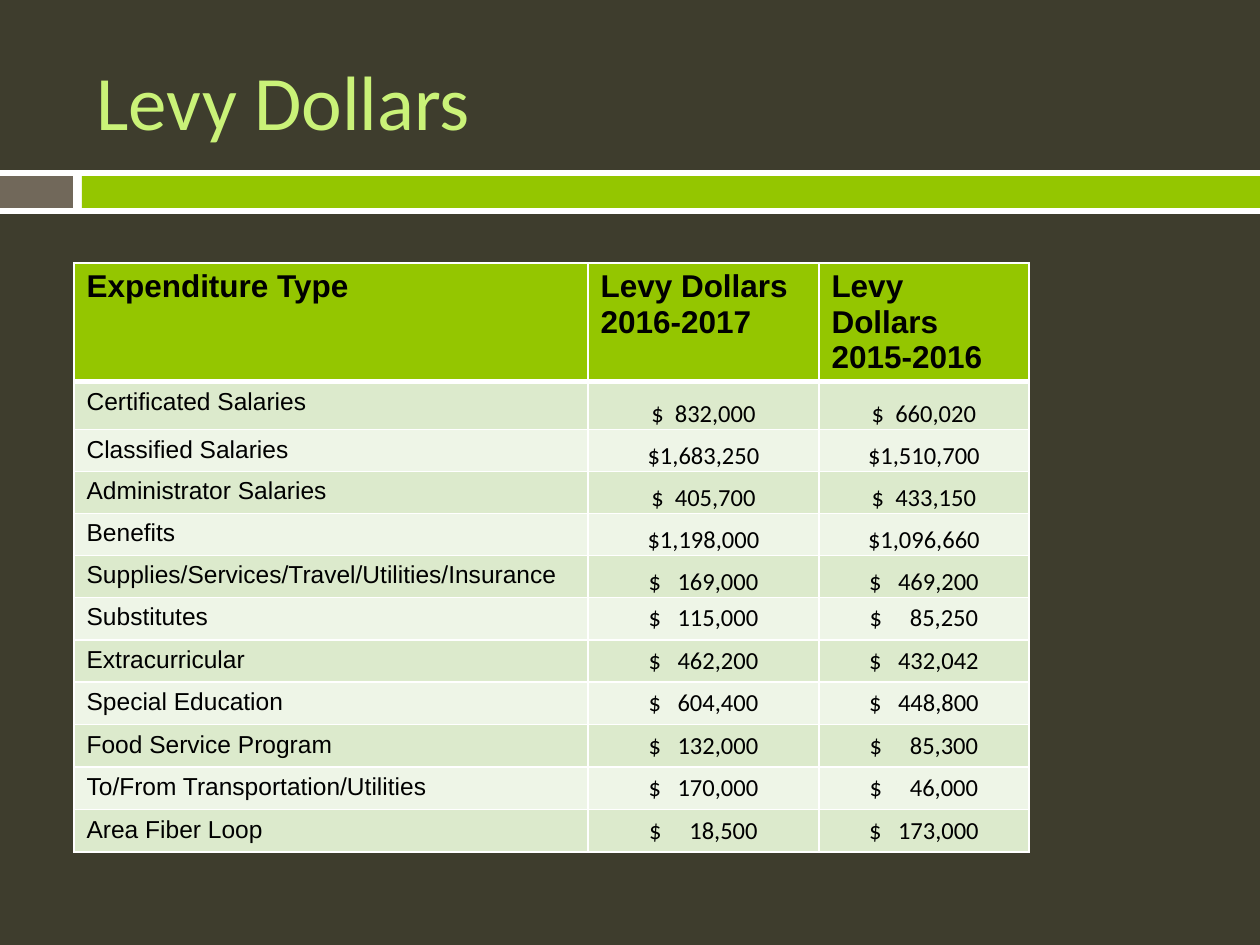
from lxml import etree
from pptx import Presentation
from pptx.dml.color import RGBColor
from pptx.enum.shapes import MSO_SHAPE
from pptx.enum.text import MSO_ANCHOR, PP_ALIGN
from pptx.oxml.ns import qn
from pptx.util import Emu, Pt

RECTANGLE = MSO_SHAPE.RECTANGLE
TOP, MIDDLE, BOTTOM = MSO_ANCHOR.TOP, MSO_ANCHOR.MIDDLE, MSO_ANCHOR.BOTTOM
LEFT, CENTER = PP_ALIGN.LEFT, PP_ALIGN.CENTER

DARK = RGBColor(0x3E, 0x3D, 0x2D)
WHITE = RGBColor(0xFF, 0xFF, 0xFF)
BLACK = RGBColor(0, 0, 0)
BROWN = RGBColor(0x71, 0x68, 0x5A)
GREEN = RGBColor(0x94, 0xC6, 0x00)
LIME = RGBColor(0xCA, 0xF2, 0x78)
BANDS = (RGBColor(0xDC, 0xEA, 0xCC), RGBColor(0xEE, 0xF5, 0xE7))

TITLE = "Levy Dollars"
HEADERS = (("Expenditure Type",), ("Levy Dollars", "2016-2017"), ("Levy Dollars", "2015-2016"))
EXPENDITURES = [
    ("Certificated Salaries", 832000, 660020),
    ("Classified Salaries", 1683250, 1510700),
    ("Administrator Salaries", 405700, 433150),
    ("Benefits", 1198000, 1096660),
    ("Supplies/Services/Travel/Utilities/Insurance", 169000, 469200),
    ("Substitutes", 115000, 85250),
    ("Extracurricular", 462200, 432042),
    ("Special Education", 604400, 448800),
    ("Food Service Program", 132000, 85300),
    ("To/From Transportation/Utilities", 170000, 46000),
    ("Area Fiber Loop", 18500, 173000),
]
BARS = [
    ((0, 170, 1260, 44), WHITE),
    ((0, 176, 73, 32), BROWN),
    ((82, 176, 1178, 32), GREEN),
]
TITLE_BOX = (84, 32, 1124, 136)
TABLE_LEFT, TABLE_TOP = 74, 263
COLUMN_WIDTHS = (514, 231, 210)
ROW_HEIGHTS = [76, 48] + [42] * (len(EXPENDITURES) - 1)
NARROW_GAP_ROWS = 4
BOTTOM_ANCHORED_ROWS = 5
TIGHT_MARGINS = {"margin_left": 1, "margin_right": 1, "margin_top": 1, "margin_bottom": 0}

TITLE_FONT = {"name": "Calibri", "size": Pt(44), "bold": False}
HEADER_FONT = {"name": "Arial", "size": Pt(18), "bold": True}
LABEL_FONT = {"name": "Arial", "size": Pt(14), "bold": False}
AMOUNT_FONT = {"name": "Calibri", "size": Pt(14), "bold": False}


def px(length):
    return Emu(round(length * 914400 / 126))


def add_run(paragraph, text, font_format, color=BLACK):
    run = paragraph.add_run()
    run.text = text
    for name, value in font_format.items():
        setattr(run.font, name, value)
    run.font.color.rgb = color
    return run


def add_amount(paragraph, amount, gap):
    """Write a dollar amount; gap is the space after the sign, in space widths."""
    if amount >= 1_000_000:
        add_run(paragraph, f"${amount:,}", AMOUNT_FONT)
        return
    if amount < 100_000:
        gap += 2
    sign = add_run(paragraph, "$ ", AMOUNT_FONT)
    # Half a 14 pt space, in hundredths of a point, after each of the two characters
    sign.font._element.set("spc", str((gap - 1) * 158))
    add_run(paragraph, f"{amount:,}", AMOUNT_FONT)


def style_cell(cell, color, top_width=1, bottom_width=1):
    """Draw white borders, then fill: the schema wants lines before the fill."""
    properties = cell._tc.get_or_add_tcPr()
    widths = {"a:lnL": 1, "a:lnR": 1, "a:lnT": top_width, "a:lnB": bottom_width}
    for tag, width in widths.items():
        line = etree.SubElement(properties, qn(tag), w=str(Pt(width)))
        fill = etree.SubElement(line, qn("a:solidFill"))
        etree.SubElement(fill, qn("a:srgbClr"), val=str(WHITE))
    cell.fill.solid()
    cell.fill.fore_color.rgb = color


def add_bars(slide):
    for box, color in BARS:
        bar = slide.shapes.add_shape(RECTANGLE, *map(px, box))
        bar.shadow.inherit = False
        bar.fill.solid()
        bar.fill.fore_color.rgb = color
        bar.line.fill.background()


def format_title(slide):
    title = slide.shapes.title
    title.left, title.top, title.width, title.height = map(px, TITLE_BOX)
    title.text_frame.vertical_anchor = MIDDLE
    paragraph = title.text_frame.paragraphs[0]
    paragraph.alignment = LEFT
    add_run(paragraph, TITLE, TITLE_FONT, LIME)


def add_levy_table(slide):
    table = slide.shapes.add_table(
        len(ROW_HEIGHTS), len(COLUMN_WIDTHS), px(TABLE_LEFT), px(TABLE_TOP),
        px(sum(COLUMN_WIDTHS)), px(sum(ROW_HEIGHTS))).table
    for column, width in zip(table.columns, COLUMN_WIDTHS):
        column.width = px(width)
    for row, height in zip(table.rows, ROW_HEIGHTS):
        row.height = px(height)

    for column, lines in enumerate(HEADERS):
        cell = table.cell(0, column)
        style_cell(cell, GREEN, bottom_width=3)
        for number, line in enumerate(lines):
            frame = cell.text_frame
            paragraph = frame.add_paragraph() if number else frame.paragraphs[0]
            add_run(paragraph, line, HEADER_FONT)

    for index, (label, *amounts) in enumerate(EXPENDITURES):
        cells = [table.cell(index + 1, column) for column in range(len(COLUMN_WIDTHS))]
        for cell in cells:
            style_cell(cell, BANDS[index % 2], top_width=1 if index else 3)
        add_run(cells[0].text_frame.paragraphs[0], label, LABEL_FONT)
        gap = 2 if index < NARROW_GAP_ROWS else 3
        for cell, amount in zip(cells[1:], amounts):
            paragraph = cell.text_frame.paragraphs[0]
            paragraph.alignment = CENTER
            add_amount(paragraph, amount, gap)
            cell.vertical_anchor = TOP
            if index < BOTTOM_ANCHORED_ROWS:
                cell.vertical_anchor = BOTTOM
                for name, margin in TIGHT_MARGINS.items():
                    setattr(cell, name, px(margin))


def main():
    presentation = Presentation()
    presentation.slide_width, presentation.slide_height = px(1260), px(945)
    slide = presentation.slides.add_slide(presentation.slide_layouts[5])
    slide.background.fill.solid()
    slide.background.fill.fore_color.rgb = DARK
    add_bars(slide)
    format_title(slide)
    add_levy_table(slide)
    presentation.save("out.pptx")


if __name__ == "__main__":
    main()
